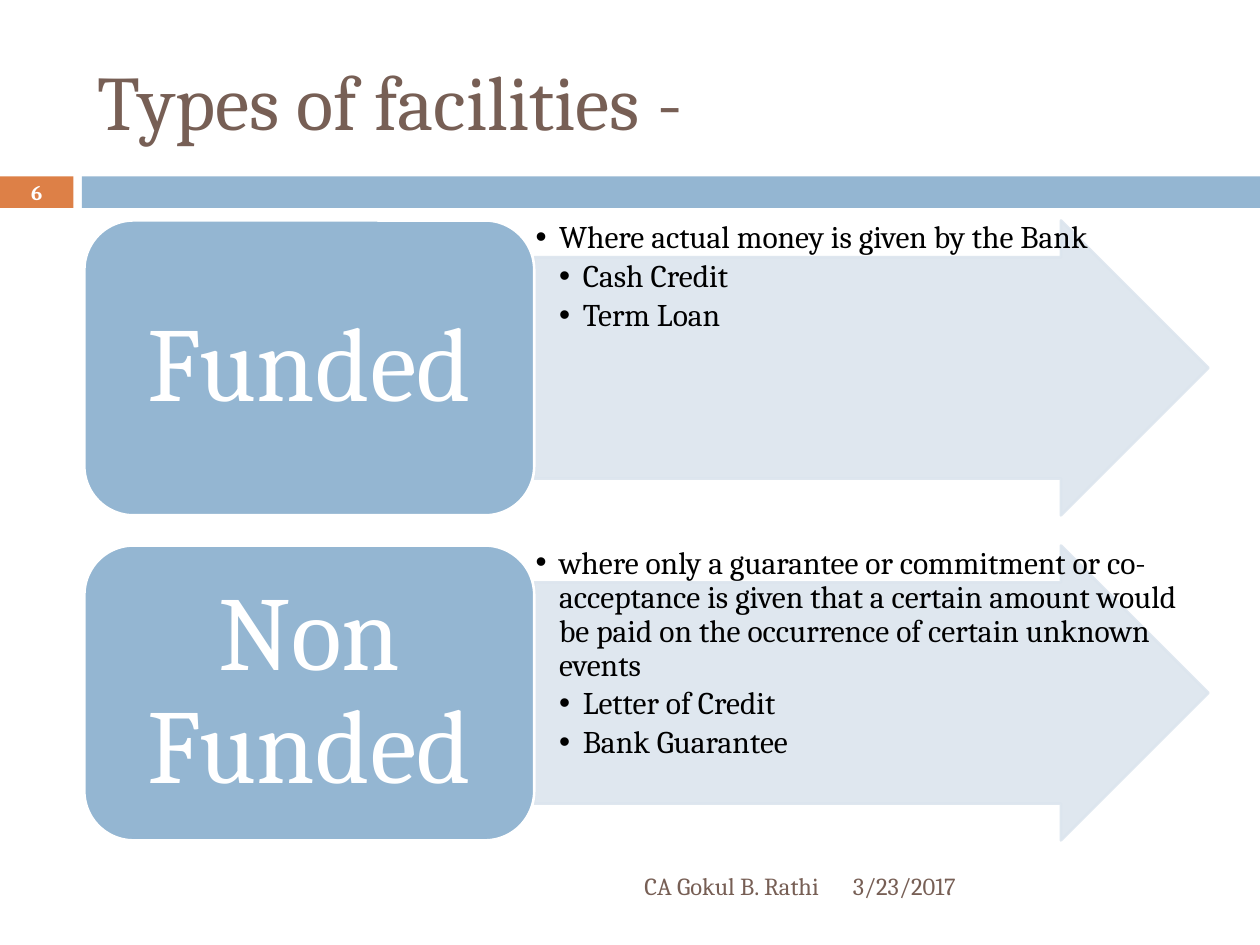
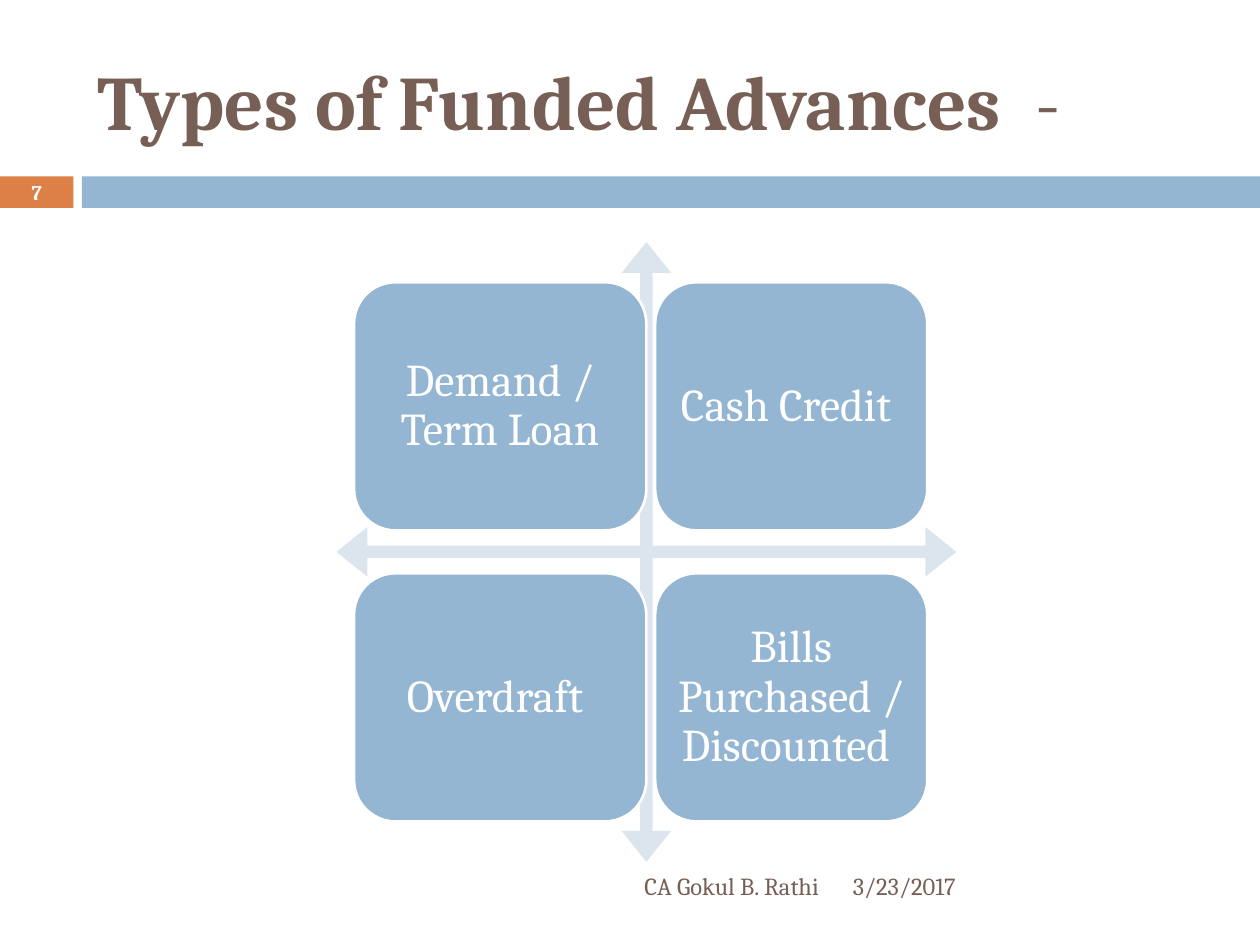
"""Build two slides on bank credit facilities."""
import pptx
import pptx.util
import pptx.dml.color
import pptx.enum.shapes
import pptx.enum.text
import pptx.oxml.ns
import lxml.etree

Pt = pptx.util.Pt
Kind = pptx.enum.shapes.MSO_SHAPE
Align = pptx.enum.text.PP_ALIGN
Anchor = pptx.enum.text.MSO_ANCHOR

FACE = "Cambria"
HUES = {"blue": "94B6D2", "pale": "DCE5EE", "rust": "DD8047",
        "brown": "775F55", "white": "FFFFFF", "black": "000000"}
AUTHOR, DATE = "CA Gokul B. Rathi", "3/23/2017"

KINDS = {
    "page": 6,
    "title": [("Types of facilities -", False)],
    "rows": [
        ("Funded", [("Where actual money is given by the Bank", 0),
                    ("Cash Credit", 1), ("Term Loan", 1)]),
        ("Non Funded", [("where only a guarantee or commitment or co-acceptance "
                         "is given that a certain amount would be paid on the "
                         "occurrence of certain unknown events", 0),
                        ("Letter of Credit", 1), ("Bank Guarantee", 1)]),
    ],
}
LOANS = {
    "page": 7,
    "title": [("Types of Funded Advances  ", True), ("-", False)],
    "grid": [["Demand / Term Loan", "Cash Credit "],
             ["Overdraft ", "Bills Purchased / Discounted "]],
}

LEFT, WIDTH = 48.24, 642.24
ROW_TOP, ROW_STEP, ROW_HIGH = 126, 185.76, 168.48
LABEL_WIDE = 257.04
COLS = [(202.32, 167.04), (374.4, 155.52)]
CELL_TOP, CELL_STEP, CELL_HIGH = 161.28, 166.32, 141.84
INDENT = 13.5


def paint(color, hue):
    color.rgb = pptx.dml.color.RGBColor.from_string(HUES[hue])


def style(para, size, hue, align=Align.LEFT, bold=False):
    para.alignment = align
    para.font.name, para.font.size, para.font.bold = FACE, Pt(size), bold
    paint(para.font.color, hue)


def place(shape, box):
    shape.left, shape.top, shape.width, shape.height = map(Pt, box)


def frame(shape, pads, anchor=Anchor.MIDDLE):
    text = shape.text_frame
    text.word_wrap = True
    text.auto_size = pptx.enum.text.MSO_AUTO_SIZE.NONE
    text.vertical_anchor = anchor
    text.margin_left = text.margin_right = Pt(pads[0])
    text.margin_top = text.margin_bottom = Pt(pads[1])
    return text


def draw(slide, kind, box, hue, edge=None, adjs=()):
    shape = slide.shapes.add_shape(kind, *map(Pt, box))
    shape.shadow.inherit = False
    shape.fill.solid()
    paint(shape.fill.fore_color, hue)
    if edge:
        paint(shape.line.color, edge)
        shape.line.width = Pt(1.5)
    else:
        shape.line.fill.background()
    for i, adj in enumerate(adjs):
        shape.adjustments[i] = adj
    return shape


def fade(shape, share):
    tag = pptx.oxml.ns.qn
    for color in shape.element.spPr.iter(tag("a:srgbClr")):
        lxml.etree.SubElement(color, tag("a:alpha"), val=str(share * 1000))


def card(slide, box, words, size, pads):
    shape = draw(slide, Kind.ROUNDED_RECTANGLE, box, "blue", "white")
    para = frame(shape, pads).paragraphs[0]
    para.text = words
    para.line_spacing = 0.9
    style(para, size, "white", Align.CENTER)


def label(slide, box, words, *look):
    shape = slide.shapes.add_textbox(*map(Pt, box))
    para = frame(shape, (7.2, 3.6)).paragraphs[0]
    para.text = words
    style(para, *look)


def start(deck, layout, data):
    slide = deck.slides.add_slide(deck.slide_layouts[layout])
    for holder in list(slide.placeholders):
        if holder.placeholder_format.idx >= 10:
            holder.element.getparent().remove(holder.element)
    draw(slide, Kind.RECTANGLE, (0, 100.8, 42, 18), "rust")
    draw(slide, Kind.RECTANGLE, (46.8, 100.8, 673.2, 18), "blue")
    title = slide.shapes.title
    place(title, (LEFT, 18, WIDTH, 77.76))
    para = frame(title, (7.2, 3.6)).paragraphs[0]
    style(para, 44, "brown")
    for words, bold in data["title"]:
        run = para.add_run()
        run.text, run.font.bold = words, bold
    label(slide, (480.24, 491.76, 210.24, 28.8), DATE, 14, "brown")
    label(slide, (LEFT, 491.76, 426.96, 28.8), AUTHOR, 14, "brown", Align.RIGHT)
    label(slide, (0, 100.08, 42, 19.44), str(data["page"]), 11.9, "white",
          Align.CENTER, True)
    return slide


def fill_list(holder, box, items):
    tag = pptx.oxml.ns.qn
    place(holder, box)
    holder.element.getparent().append(holder.element)
    text = frame(holder, (0.72, 0.72), Anchor.TOP)
    for i, (words, level) in enumerate(items):
        para = text.add_paragraph() if i else text.paragraphs[0]
        para.text, para.level = words, level
        props = para._p.get_or_add_pPr()
        props.set("marL", str(Pt(INDENT * (level + 1))))
        props.set("indent", str(-Pt(INDENT)))
        lxml.etree.SubElement(props, tag("a:buChar"), char="•")
        para.line_spacing = 0.9
        para.space_before, para.space_after = Pt(0), Pt(2.7)
        style(para, 18, "black")


def show_kinds(deck):
    slide = start(deck, 3, KINDS)
    lists = [slide.placeholders[1], slide.placeholders[2]]
    for i, (name, items) in enumerate(KINDS["rows"]):
        top = ROW_TOP + i * ROW_STEP
        box = (LEFT + LABEL_WIDE, top, WIDTH - LABEL_WIDE, ROW_HIGH)
        arrow = draw(slide, Kind.RIGHT_ARROW, box, "pale", "pale", (0.75, 0.5))
        fade(arrow, 90)
        fill_list(lists[i], box, items)
        card(slide, (LEFT, top, LABEL_WIDE, ROW_HIGH), name, 60, (9.8, 0.5))


def show_loans(deck):
    slide = start(deck, 5, LOANS)
    draw(slide, Kind.QUAD_ARROW, (192.24, 138.24, 354.24, 354.24), "pale",
         adjs=(0.02, 0.04, 0.05))
    for i, row in enumerate(LOANS["grid"]):
        for (left, wide), words in zip(COLS, row):
            box = (left, CELL_TOP + i * CELL_STEP, wide, CELL_HIGH)
            card(slide, box, words, 26, (1, 1))


def main():
    deck = pptx.Presentation()
    deck.slide_width, deck.slide_height = Pt(720), Pt(540)
    show_kinds(deck)
    show_loans(deck)
    deck.save("out.pptx")


if __name__ == "__main__":
    main()
